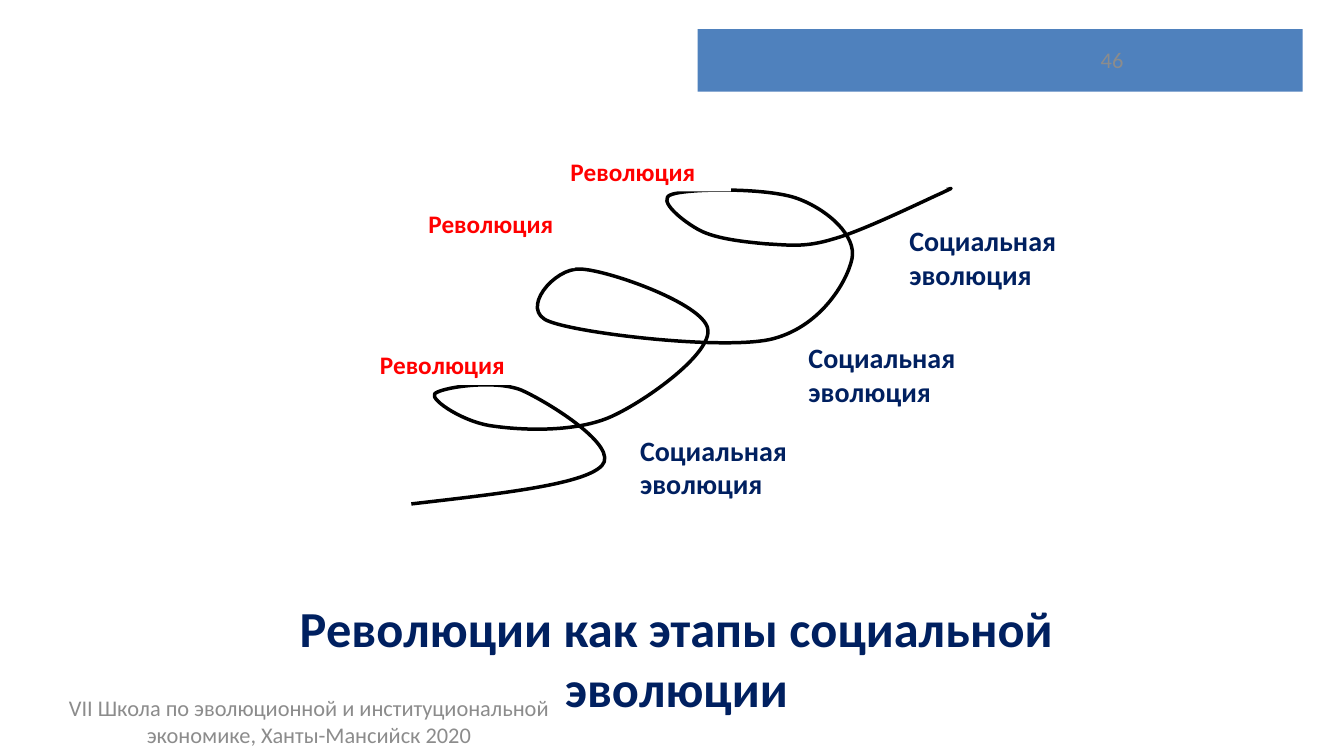
from lxml import etree
from pptx import Presentation
from pptx.dml.color import RGBColor
from pptx.enum.shapes import MSO_SHAPE
from pptx.enum.text import MSO_ANCHOR, PP_ALIGN
from pptx.oxml.ns import qn
from pptx.util import Inches, Pt

RECTANGLE = MSO_SHAPE.RECTANGLE
TOP, MIDDLE = MSO_ANCHOR.TOP, MSO_ANCHOR.MIDDLE
LEFT, CENTER = PP_ALIGN.LEFT, PP_ALIGN.CENTER

WHITE = RGBColor(0xFF, 0xFF, 0xFF)
BLACK = RGBColor(0x00, 0x00, 0x00)
BLUE = RGBColor(0x4F, 0x81, 0xBD)
NAVY = RGBColor(0x00, 0x20, 0x60)
RED = RGBColor(0xFF, 0x00, 0x00)
GRAY = RGBColor(0x8C, 0x8C, 0x8C)

TITLE = {"size": Pt(36), "bold": True}
EVOLUTION = {"size": Pt(20), "bold": True}
REVOLUTION = {"size": Pt(18), "bold": True}
FOOTER = {"size": Pt(16), "bold": False}

LABELS = [
    ("Социальная эволюция", (8.92, 2.17, 2.25, 1.11), EVOLUTION, NAVY),
    ("Социальная эволюция", (7.92, 3.33, 2.75, 1.11), EVOLUTION, NAVY),
    ("Социальная эволюция", (6.25, 4.25, 2.42, 0.77), EVOLUTION, NAVY),
    ("Революция", (3.67, 3.42, 1.47, 0.4), REVOLUTION, RED),
    ("Революция", (4.15, 2.02, 1.55, 0.64), REVOLUTION, RED),
    ("Революция", (5.56, 1.5, 1.69, 0.4), REVOLUTION, RED),
]

SPIRAL_START = (4.08, 5)
SPIRAL_CURVES = [
    ((4.94, 4.9), (5.79, 4.81), (5.97, 4.62)),
    ((6.15, 4.43), (5.44, 3.99), (5.17, 3.87)),
    ((4.89, 3.76), (4.35, 3.85), (4.31, 3.91)),
    ((4.27, 3.97), (4.61, 4.2), (4.91, 4.23)),
    ((5.2, 4.27), (5.72, 4.29), (6.07, 4.13)),
    ((6.42, 3.97), (7.07, 3.5), (7.02, 3.26)),
    ((6.97, 3.01), (6.03, 2.68), (5.76, 2.67)),
    ((5.5, 2.65), (5.14, 3.08), (5.45, 3.19)),
    ((5.76, 3.31), (7.13, 3.47), (7.63, 3.37)),
    ((8.13, 3.26), (8.4, 2.8), (8.45, 2.57)),
    ((8.5, 2.34), (8.21, 2.08), (7.91, 1.97)),
    ((7.61, 1.86), (6.82, 1.87), (6.66, 1.93)),
    ((6.5, 1.98), (6.79, 2.21), (6.95, 2.29)),
    ((7.11, 2.37), (7.38, 2.4), (7.6, 2.42)),
    ((7.82, 2.43), (7.98, 2.46), (8.27, 2.37)),
    ((8.56, 2.29), (9.15, 2), (9.33, 1.92)),
    ((9.52, 1.83), (9.39, 1.89), (9.39, 1.88)),
]


def add_rectangle(page, place, color):
    box = page.shapes.add_shape(RECTANGLE, *map(Inches, place))
    box.shadow.inherit = False
    box.fill.solid()
    box.fill.fore_color.rgb = color
    box.line.fill.background()
    return box


def write_text(box, text, style, color, align=LEFT, anchor=TOP, before=0):
    frame = box.text_frame
    frame.word_wrap = True
    frame.vertical_anchor = anchor
    para = frame.paragraphs[0]
    para.alignment = align
    para.space_before = Pt(before)
    span = para.add_run()
    span.text = text
    span.font.name = "Calibri"
    span.font.color.rgb = color
    for name, value in style.items():
        setattr(span.font, name, value)


def add_text(page, place, *content, **layout):
    box = page.shapes.add_textbox(*map(Inches, place))
    write_text(box, *content, **layout)


def bend_segments(shape):
    segments = list(shape.element.iter(qn("a:lnTo")))
    for first in range(0, len(segments), 3):
        group = segments[first:first + 3]
        outline = group[0].getparent()
        curve = etree.SubElement(outline, qn("a:cubicBezTo"))
        for segment in group:
            curve.append(segment[0])
            outline.remove(segment)


def add_spiral(page):
    points = [tuple(map(Inches, point)) for curve in SPIRAL_CURVES for point in curve]
    builder = page.shapes.build_freeform(*map(Inches, SPIRAL_START))
    builder.add_line_segments(points, close=False)
    spiral = builder.convert_to_shape()
    bend_segments(spiral)
    spiral.shadow.inherit = False
    spiral.fill.background()
    spiral.line.color.rgb = BLACK
    spiral.line.width = Pt(2.5)


def main():
    deck = Presentation()
    deck.slide_width, deck.slide_height = Inches(13.33), Inches(7.5)
    page = deck.slides.add_slide(deck.slide_layouts[6])

    add_rectangle(page, (6.92, 0.29, 6, 0.62), BLUE)
    add_text(page, (10.53, 0.39, 1, 0.4), "46", FOOTER, GRAY, align=CENTER, anchor=MIDDLE)
    add_text(page, (2, 5.87, 9.42, 0.88), "Революции как этапы социальной эволюции",
             TITLE, NAVY, align=CENTER, before=6)
    add_spiral(page)
    for text, place, style, color in LABELS:
        write_text(add_rectangle(page, place, WHITE), text, style, color)
    add_text(page, (0.25, 6.95, 5.63, 0.4),
             "VII Школа по эволюционной и институциональной экономике, Ханты-Мансийск 2020",
             FOOTER, GRAY, align=CENTER, anchor=MIDDLE)

    deck.save("out.pptx")


if __name__ == "__main__":
    main()
